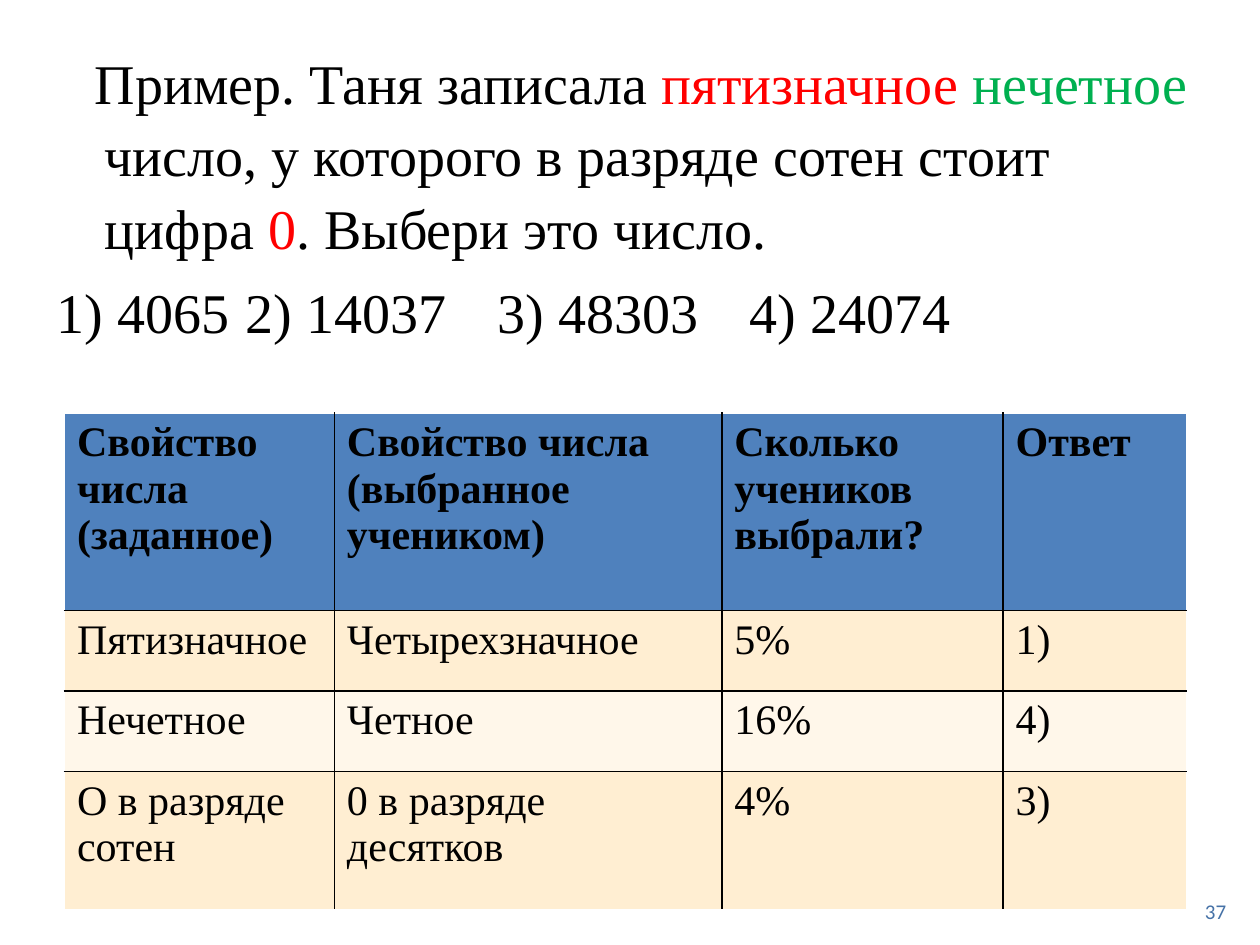
from dataclasses import dataclass

from lxml.etree import SubElement
from pptx import Presentation
from pptx.dml.color import RGBColor
from pptx.enum.text import MSO_AUTO_SIZE, PP_ALIGN
from pptx.oxml.ns import qn
from pptx.util import Cm, Pt


@dataclass(frozen=True)
class Theme:
    """Fonts, sizes and colours of the slide."""
    serif: str = "Times New Roman"
    sans: str = "Calibri"
    task_size: int = 32
    table_size: int = 24
    number_size: int = 12
    black: str = "000000"
    red: str = "FF0000"
    green: str = "00B050"
    number: str = "4672A7"
    header: str = "4F81BD"
    bands: tuple = ("FFEED2", "FFF7EA")


THEME = Theme()
TASK = [
    ("Пример. Таня записала ", THEME.black),
    ("пятизначное ", THEME.red),
    ("нечетное", THEME.green),
    (" число, у которого в разряде сотен стоит цифра ", THEME.black),
    ("0", THEME.red),
    (". Выбери это число.", THEME.black),
]
OPTIONS = ["1) 4065", "2) 14037", "3) 48303", "4) 24074"]
OPTION_STOPS = [6.88, 12.34, 18.92]
ROWS = [
    ["Свойство числа (заданное)", "Свойство числа (выбранное учеником)",
     "Сколько учеников выбрали?", "Ответ"],
    ["Пятизначное", "Четырехзначное", "5%", "1)"],
    ["Нечетное", "Четное", "16%", "4)"],
    ["О в разряде сотен", "0 в разряде десятков", "4%", "3)"],
]
COLUMN_WIDTHS = [5.44, 7.81, 5.67, 3.7]
ROW_HEIGHTS = [3.98, 1.62, 1.62, 2.8]


def style_run(run, font, size, color, bold=False):
    """Give a run its font, size, colour and weight."""
    run.font.name = font
    run.font.size = Pt(size)
    run.font.bold = bold
    run.font.color.rgb = RGBColor.from_string(color)


def style_paragraph(paragraph, margin, indent, stops=()):
    """Remove the bullet and set spacing, indents and tab stops."""
    paragraph.space_before = Pt(6.4)
    paragraph.line_spacing = 1.08
    properties = paragraph._p.get_or_add_pPr()
    properties.set("marL", str(Cm(margin)))
    properties.set("indent", str(Cm(indent)))
    SubElement(properties, qn("a:buNone"))
    if stops:
        tabs = SubElement(properties, qn("a:tabLst"))
        for stop in stops:
            SubElement(tabs, qn("a:tab"), pos=str(Cm(stop)), algn="l")


def add_task(slide, left, top, width, height):
    """Fill the body placeholder with the task and its answer options."""
    body = slide.placeholders[1]
    body.left, body.top, body.width, body.height = left, top, width, height
    frame = body.text_frame
    frame.auto_size = MSO_AUTO_SIZE.NONE
    question = frame.paragraphs[0]
    style_paragraph(question, 0.97, -0.2)
    for text, color in TASK:
        run = question.add_run()
        run.text = text
        style_run(run, THEME.serif, THEME.task_size, color)
    options = frame.add_paragraph()
    style_paragraph(options, 0, 0, OPTION_STOPS)
    options.text = "\t".join(OPTIONS)
    for run in options.runs:
        style_run(run, THEME.serif, THEME.task_size, THEME.black)


def add_border(cell, side):
    """Draw a thin black line on one side of a cell."""
    line = SubElement(cell._tc.get_or_add_tcPr(), qn(f"a:ln{side}"), w=str(Pt(1)))
    fill = SubElement(line, qn("a:solidFill"))
    SubElement(fill, qn("a:srgbClr"), val=THEME.black)


def style_cell(cell, row, column):
    """Set the inner borders, fill and text style of a cell."""
    sides = {"L": column > 0, "R": column < len(COLUMN_WIDTHS) - 1,
             "T": row > 0, "B": row < len(ROWS) - 1}
    for side, inner in sides.items():
        if inner:
            add_border(cell, side)
    color = THEME.bands[(row - 1) % 2] if row else THEME.header
    cell.fill.solid()
    cell.fill.fore_color.rgb = RGBColor.from_string(color)
    for run in cell.text_frame.paragraphs[0].runs:
        style_run(run, THEME.serif, THEME.table_size, THEME.black, bold=row == 0)


def add_answers(slide, left, top, width, height):
    """Add the table of properties, shares and answers."""
    table = slide.shapes.add_table(
        len(ROWS), len(COLUMN_WIDTHS), left, top, width, height).table
    for column, column_width in zip(table.columns, COLUMN_WIDTHS):
        column.width = Cm(column_width)
    for row, row_height in zip(table.rows, ROW_HEIGHTS):
        row.height = Cm(row_height)
    for row, texts in enumerate(ROWS):
        for column, text in enumerate(texts):
            cell = table.cell(row, column)
            cell.text_frame.text = text
            style_cell(cell, row, column)


def add_page_number(slide, left, top, width, height):
    """Add the page number, aligned right."""
    frame = slide.shapes.add_textbox(left, top, width, height).text_frame
    frame.word_wrap = True
    frame.text = "37"
    paragraph = frame.paragraphs[0]
    paragraph.alignment = PP_ALIGN.RIGHT
    style_run(paragraph.runs[0], THEME.sans, THEME.number_size, THEME.number)


def main():
    """Build the slide and save it."""
    presentation = Presentation()
    presentation.slide_width, presentation.slide_height = Cm(25.4), Cm(19.05)
    slide = presentation.slides.add_slide(presentation.slide_layouts[1])
    title = slide.shapes.title
    title.element.getparent().remove(title.element)
    add_task(slide, Cm(0.89), Cm(0.74), Cm(23.7), Cm(16.3))
    add_answers(slide, Cm(1.3), Cm(8.33), Cm(22.62), Cm(10.02))
    add_page_number(slide, Cm(22.86), Cm(17.98), Cm(2.11), Cm(0.69))
    presentation.save("out.pptx")


if __name__ == "__main__":
    main()
